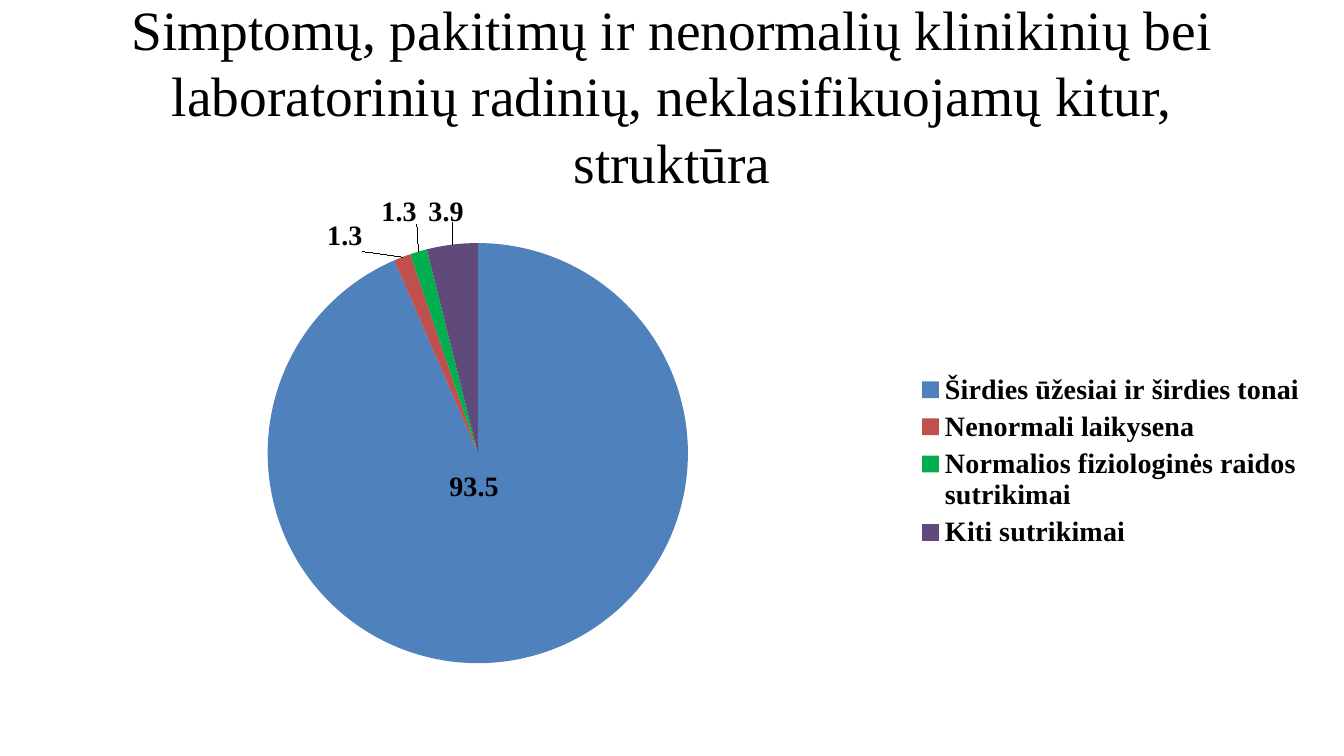
"""Build a slide with a pie chart of symptoms and abnormal findings."""
from dataclasses import dataclass

from lxml import etree
from pptx import Presentation
from pptx.chart.chart import Chart
from pptx.chart.data import CategoryChartData
from pptx.chart.series import PieSeries
from pptx.dml.color import RGBColor
from pptx.enum.chart import XL_CHART_TYPE, XL_LABEL_POSITION, XL_LEGEND_POSITION
from pptx.enum.text import MSO_ANCHOR, MSO_AUTO_SIZE, PP_ALIGN
from pptx.oxml.ns import qn
from pptx.slide import Slide
from pptx.text.text import Font
from pptx.util import Inches, Pt

PIE = XL_CHART_TYPE.PIE
CENTER = XL_LABEL_POSITION.CENTER
OUTSIDE = XL_LABEL_POSITION.OUTSIDE_END
RIGHT = XL_LEGEND_POSITION.RIGHT
MIDDLE = MSO_ANCHOR.MIDDLE
NO_FIT = MSO_AUTO_SIZE.NONE
CENTERED = PP_ALIGN.CENTER

BLACK = RGBColor(0x00, 0x00, 0x00)
BLUE = RGBColor(0x4F, 0x81, 0xBD)
RED = RGBColor(0xC0, 0x50, 0x4D)
GREEN = RGBColor(0x00, 0xB0, 0x50)
PURPLE = RGBColor(0x60, 0x4A, 0x7B)

SERIF = "Times New Roman"
SANS = "Calibri"
WIDTH, HEIGHT = Inches(13.33), Inches(7.5)
TITLE = "Simptomų, pakitimų ir nenormalių klinikinių bei laboratorinių radinių, neklasifikuojamų kitur, struktūra"


@dataclass(frozen=True)
class Box:
    """A rectangle in shares of its container."""
    left: float
    top: float
    width: float
    height: float

    def on_slide(self) -> tuple[int, int, int, int]:
        """Return the rectangle in slide units."""
        return (int(self.left * WIDTH), int(self.top * HEIGHT),
                int(self.width * WIDTH), int(self.height * HEIGHT))


@dataclass(frozen=True)
class Slice:
    """One pie slice with the shift of its label in shares of the chart."""
    name: str
    value: float
    color: RGBColor
    position: XL_LABEL_POSITION
    shift: tuple[float, float]


TITLE_BOX = Box(0.05, 0.04, 0.9, 0.17)
CHART_BOX = Box(0.05, 0.26, 0.93, 0.7)
PLOT_BOX = Box(0.045, 0.088, 0.567, 0.794)
SLICES = (
    Slice("Širdies ūžesiai ir širdies tonai", 93.5, BLUE, CENTER, (-0.02, -0.13)),
    Slice("Nenormali laikysena", 1.3, RED, OUTSIDE, (-0.03, 0)),
    Slice("Normalios fiziologinės raidos sutrikimai", 1.3, GREEN, OUTSIDE, (0, -0.04)),
    Slice("Kiti sutrikimai", 3.9, PURPLE, OUTSIDE, (0.01, -0.03)),
)


def style_font(font: Font, name: str, size: float, bold: bool) -> None:
    """Apply a black typeface."""
    font.name, font.size, font.bold = name, Pt(size), bold
    font.color.rgb = BLACK


def make_layout(**settings: object) -> etree._Element:
    """Return a manual chart layout with the given settings."""
    layout = etree.Element(qn("c:layout"))
    manual = etree.SubElement(layout, qn("c:manualLayout"))
    for tag, value in settings.items():
        etree.SubElement(manual, qn(f"c:{tag}")).set("val", str(value))
    return layout


def add_title(slide: Slide) -> None:
    """Place and format the slide title."""
    title = slide.shapes.title
    title.left, title.top, title.width, title.height = TITLE_BOX.on_slide()
    frame = title.text_frame
    frame.text = TITLE
    frame.auto_size, frame.vertical_anchor, frame.word_wrap = NO_FIT, MIDDLE, True
    para = frame.paragraphs[0]
    para.alignment = CENTERED
    style_font(para.runs[0].font, SERIF, 39.6, False)


def place_plot(chart: Chart) -> None:
    """Fix the inner plot area inside the chart."""
    area = chart.element.find(".//" + qn("c:plotArea"))
    for old in area.findall(qn("c:layout")):
        area.remove(old)
    area.insert(0, make_layout(
        layoutTarget="inner", xMode="edge", yMode="edge", x=PLOT_BOX.left,
        y=PLOT_BOX.top, w=PLOT_BOX.width, h=PLOT_BOX.height))


def format_slices(chart: Chart, series: PieSeries) -> None:
    """Colour the slices and set their value labels."""
    labels = series.data_labels
    labels.show_value, labels.position = True, OUTSIDE
    style_font(labels.font, SERIF, 20, True)
    for index, piece in enumerate(SLICES):
        point = series.points[index]
        point.format.fill.solid()
        point.format.fill.fore_color.rgb = piece.color
        style_font(point.data_label.font, SERIF, 20, True)
        point.data_label.position = piece.position
    for label, piece in zip(chart.element.iter(qn("c:dLbl")), SLICES):
        label.insert(1, make_layout(x=piece.shift[0], y=piece.shift[1]))


def add_pie(slide: Slide) -> None:
    """Add the pie chart with its legend."""
    data = CategoryChartData()
    data.categories = [piece.name for piece in SLICES]
    data.add_series("Series 1", [piece.value for piece in SLICES])
    chart = slide.shapes.add_chart(PIE, *CHART_BOX.on_slide(), data).chart
    style_font(chart.font, SANS, 18, False)
    chart.has_title = False
    chart.has_legend = True
    chart.legend.position = RIGHT
    chart.legend.include_in_layout = False
    style_font(chart.legend.font, SERIF, 20, True)
    plot = chart.plots[0]
    plot.vary_by_categories = True
    format_slices(chart, plot.series[0])
    place_plot(chart)


def main() -> None:
    """Create and save the deck."""
    deck = Presentation()
    deck.slide_width, deck.slide_height = WIDTH, HEIGHT
    page = deck.slides.add_slide(deck.slide_layouts.get_by_name("Title Only"))
    add_title(page)
    add_pie(page)
    deck.save("out.pptx")


if __name__ == "__main__":
    main()
